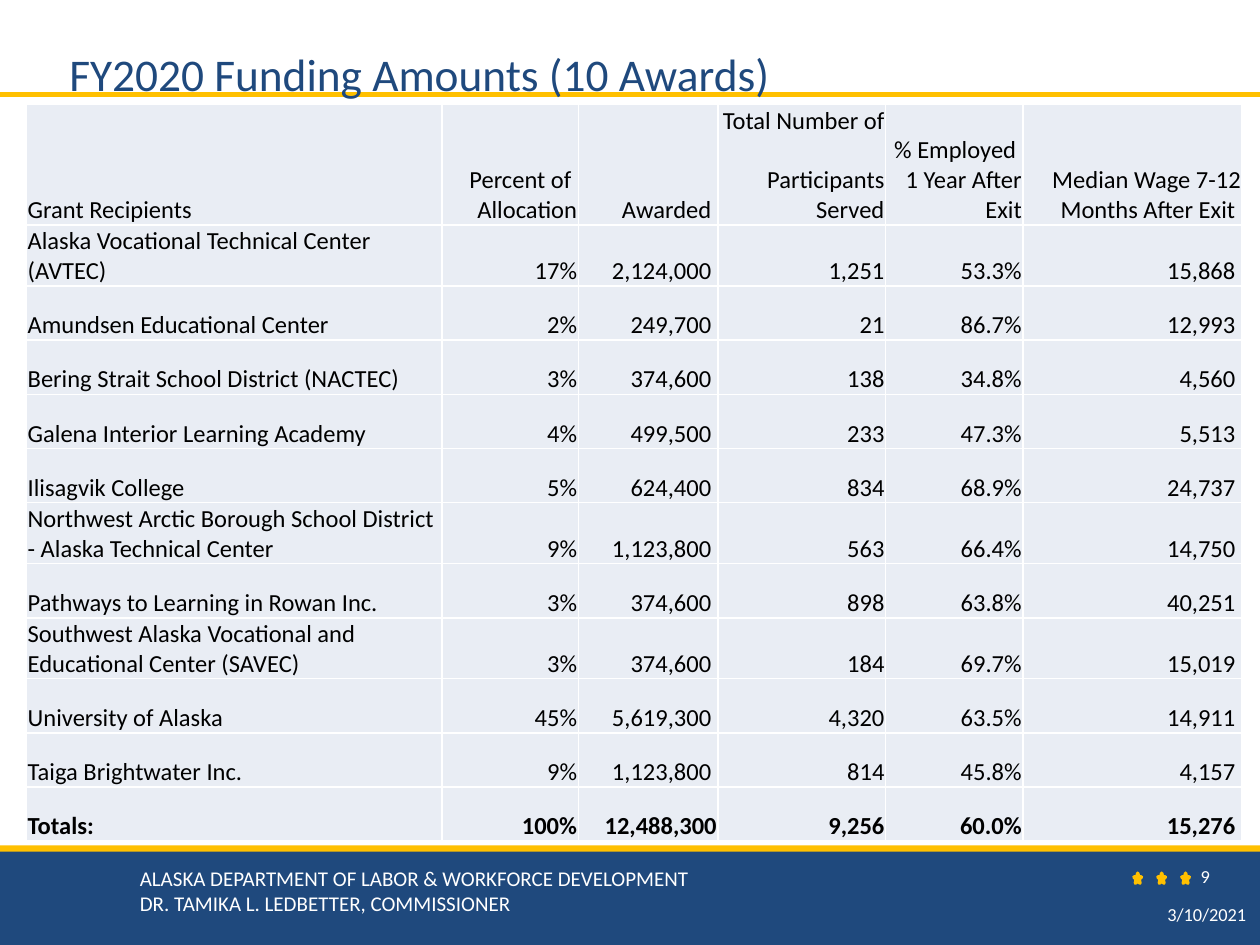
from lxml import etree
from pptx import Presentation
from pptx.dml.color import RGBColor
from pptx.enum.shapes import MSO_CONNECTOR, MSO_SHAPE
from pptx.enum.text import MSO_ANCHOR, PP_ALIGN
from pptx.oxml import parse_xml
from pptx.oxml.ns import nsdecls, qn
from pptx.util import Inches, Pt

LEFT, CENTER, RIGHT = PP_ALIGN.LEFT, PP_ALIGN.CENTER, PP_ALIGN.RIGHT
TOP, MIDDLE, BOTTOM = MSO_ANCHOR.TOP, MSO_ANCHOR.MIDDLE, MSO_ANCHOR.BOTTOM
RECTANGLE, STAR = MSO_SHAPE.RECTANGLE, MSO_SHAPE.STAR_5_POINT
STRAIGHT = MSO_CONNECTOR.STRAIGHT

FONT = "Calibri"
BLUE, GOLD, WHITE, BLACK, PALE = "1F497D", "FFC000", "FFFFFF", "000000", "E9EDF4"

COLUMN_WIDTHS = [3.3, 1.08, 1.11, 1.33, 1.09, 1.74]
HEADER_HEIGHT, ROW_HEIGHT = 0.85, 0.43
ROWS = [
    ["Grant Recipients", "Percent of \vAllocation", "Awarded ",
     "Total Number of \vParticipants Served", "% Employed \v1 Year After Exit",
     "Median Wage 7-12 Months After Exit "],
    ["Alaska Vocational Technical Center (AVTEC)", "17%", "2,124,000 ", "1,251", "53.3%", "15,868 "],
    ["Amundsen Educational Center", "2%", "249,700 ", "21", "86.7%", "12,993 "],
    ["Bering Strait School District (NACTEC)", "3%", "374,600 ", "138", "34.8%", "4,560 "],
    ["Galena Interior Learning Academy", "4%", "499,500 ", "233", "47.3%", "5,513 "],
    ["Ilisagvik College", "5%", "624,400 ", "834", "68.9%", "24,737 "],
    ["Northwest Arctic Borough School District - Alaska Technical Center",
     "9%", "1,123,800 ", "563", "66.4%", "14,750 "],
    ["Pathways to Learning in Rowan Inc.", "3%", "374,600 ", "898", "63.8%", "40,251 "],
    ["Southwest Alaska Vocational and Educational Center (SAVEC)",
     "3%", "374,600 ", "184", "69.7%", "15,019 "],
    ["University of Alaska", "45%", "5,619,300 ", "4,320", "63.5%", "14,911 "],
    ["Taiga Brightwater Inc.", "9%", "1,123,800 ", "814", "45.8%", "4,157 "],
    ["Totals:", "100%", "12,488,300", "9,256", "60.0%", "15,276 "],
]


def color(hex_value):
    return RGBColor.from_string(hex_value)


def box(left, top, width, height):
    return [Inches(value) for value in (left, top, width, height)]


def format_text(text_frame, size, font_color, alignment=LEFT, bold=False):
    text_frame.word_wrap = True
    for paragraph in text_frame.paragraphs:
        paragraph.alignment = alignment
        font = paragraph.font
        font.name, font.size, font.bold = FONT, Pt(size), bold
        font.color.rgb = color(font_color)


def add_filled_shape(slide, kind, bounds, fill, line_width=0):
    shape = slide.shapes.add_shape(kind, *box(*bounds))
    shape.shadow.inherit = False
    shape.fill.solid()
    shape.fill.fore_color.rgb = color(fill)
    if line_width:
        shape.line.color.rgb = color(fill)
        shape.line.width = Pt(line_width)
    else:
        shape.line.fill.background()


def add_rule(slide, top):
    rule = slide.shapes.add_connector(
        STRAIGHT, Inches(0), Inches(top), Inches(10), Inches(top))
    rule.line.color.rgb = color(GOLD)
    rule.line.width = Pt(3)
    etree.SubElement(rule._element.spPr, qn("a:effectLst"))


def add_label(slide, text, bounds, size, alignment=LEFT, anchor=TOP, inset=True):
    text_frame = slide.shapes.add_textbox(*box(*bounds)).text_frame
    text_frame.text = text
    text_frame.vertical_anchor = anchor
    if not inset:
        text_frame.margin_left = text_frame.margin_right = 0
        text_frame.margin_top = text_frame.margin_bottom = 0
    format_text(text_frame, size, WHITE, alignment)


def place_title(slide, text):
    """Fill the title placeholder and bring it in front of the gold rule."""
    title = slide.shapes.title
    title.left, title.top, title.width, title.height = box(0.45, 0.32, 6.74, 0.51)
    title.text_frame.text = text
    title.text_frame.vertical_anchor = TOP
    format_text(title.text_frame, 25.9, BLUE)
    title._element.getparent().append(title._element)


def set_borders(cell):
    properties = cell._tc.get_or_add_tcPr()
    for index, side in enumerate(("lnL", "lnR", "lnT", "lnB")):
        properties.insert(index, parse_xml(
            f'<a:{side} {nsdecls("a")} w="{Pt(1)}"><a:solidFill>'
            f'<a:srgbClr val="{WHITE}"/></a:solidFill></a:{side}>'))


def format_cell(cell, text, alignment, bold):
    cell.text_frame.text = text
    cell.vertical_anchor = BOTTOM
    cell.margin_left = cell.margin_right = cell.margin_top = Inches(0.01)
    cell.margin_bottom = 0
    cell.fill.solid()
    cell.fill.fore_color.rgb = color(PALE)
    set_borders(cell)
    format_text(cell.text_frame, 14, BLACK, alignment, bold)


def add_funding_table(slide):
    height = HEADER_HEIGHT + ROW_HEIGHT * (len(ROWS) - 1)
    table = slide.shapes.add_table(
        len(ROWS), len(COLUMN_WIDTHS),
        *box(0.21, 0.83, sum(COLUMN_WIDTHS), height)).table
    table.first_row = table.horz_banding = False
    for column, width in zip(table.columns, COLUMN_WIDTHS):
        column.width = Inches(width)
    for row_index, texts in enumerate(ROWS):
        table.rows[row_index].height = Inches(ROW_HEIGHT if row_index else HEADER_HEIGHT)
        is_total = row_index == len(ROWS) - 1
        for column_index, text in enumerate(texts):
            format_cell(table.cell(row_index, column_index), text,
                        RIGHT if column_index else LEFT, is_total)


def add_footer(slide):
    add_filled_shape(slide, RECTANGLE, (0, 6.74, 10, 0.76), BLUE)
    add_filled_shape(slide, RECTANGLE, (0, 6.71, 10, 0.05), GOLD)
    for index in range(3):
        add_filled_shape(slide, STAR, (9 + 0.19 * index, 6.93, 0.06, 0.08), GOLD, 2)
    add_label(slide, "3/10/2021", (8.16, 7.13, 1.83, 0.25), 10.5, RIGHT, MIDDLE)
    add_label(slide, "ALASKA DEPARTMENT OF LABOR & WORKFORCE DEVELOPMENT\n"
              "DR. TAMIKA L. LEDBETTER, COMMISSIONER",
              (1.11, 6.87, 5.72, 0.4), 12, inset=False)
    add_label(slide, "9", (9.13, 6.87, 0.87, 0.18), 10.5, CENTER, inset=False)


def main():
    presentation = Presentation()
    presentation.slide_width, presentation.slide_height = Inches(10), Inches(7.5)
    slide = presentation.slides.add_slide(presentation.slide_layouts[5])
    add_rule(slide, 0.75)
    add_footer(slide)
    place_title(slide, "FY2020 Funding Amounts (10 Awards)")
    add_funding_table(slide)
    presentation.save("out.pptx")


if __name__ == "__main__":
    main()
